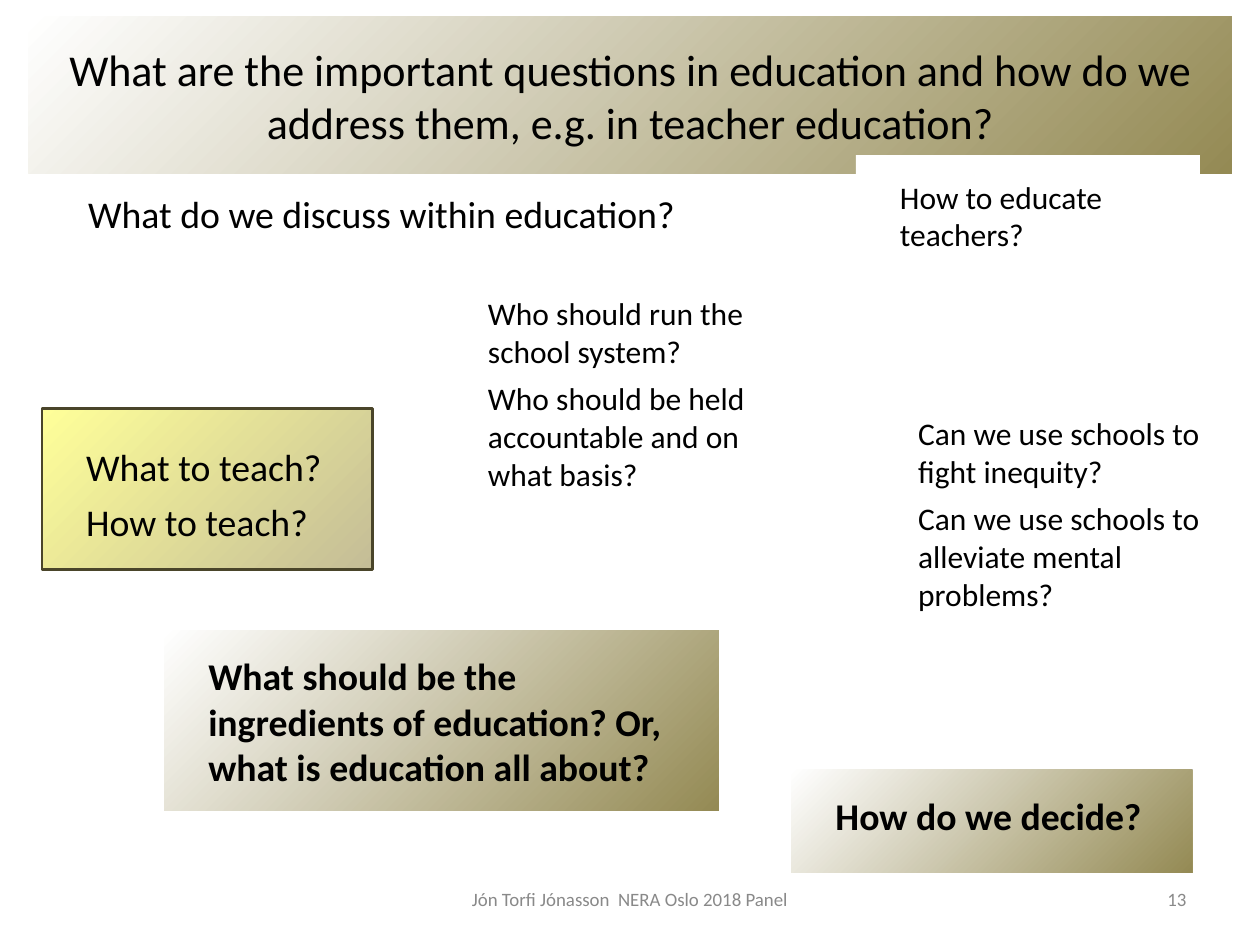
from dataclasses import dataclass

from pptx import Presentation
from pptx.dml.color import RGBColor
from pptx.enum.shapes import MSO_SHAPE
from pptx.enum.text import MSO_ANCHOR, MSO_AUTO_SIZE, PP_ALIGN
from pptx.shapes.autoshape import Shape
from pptx.slide import Slide
from pptx.util import Inches, Pt

COLORS = {
    "white": "FFFFFF",
    "olive": "948A54",
    "yellow": "FFFF99",
    "sand": "C4BD97",
    "brown": "4A452A",
    "black": "000000",
    "gray": "898989",
}
THIN = (0.1, 0.05, 0.1, 0.05)
WIDE = (0.39, 0.2, 0.39, 0.2)
OLIVE = ("white", "olive")


@dataclass(frozen=True)
class Box:
    area: tuple[float, float, float, float]
    lines: tuple[str, ...]
    size: int = 20
    pad: tuple[float, float, float, float] = WIDE
    fill: tuple[str, ...] = ()
    edge: str = ""
    bold: bool = False
    color: str = "black"
    align: PP_ALIGN = PP_ALIGN.LEFT
    anchor: MSO_ANCHOR = MSO_ANCHOR.TOP


TITLE = Box(
    (0.25, 0.15, 10.63, 1.38),
    ("What are the important questions in education and how do we "
     "address them, e.g. in teacher education?",),
    28, THIN, OLIVE, align=PP_ALIGN.CENTER, anchor=MSO_ANCHOR.MIDDLE,
)
BOXES = (
    Box((3.8, 7.72, 3.53, 0.44), ("Jón Torfi Jónasson  NERA Oslo 2018 Panel",),
        12, THIN, color="gray", align=PP_ALIGN.CENTER, anchor=MSO_ANCHOR.MIDDLE),
    Box((7.98, 7.72, 2.6, 0.44), ("13",),
        12, THIN, color="gray", align=PP_ALIGN.RIGHT, anchor=MSO_ANCHOR.MIDDLE),
    Box((0.68, 1.64, 5.67, 0.63), ("What do we discuss within education?",), 24, THIN),
    Box((0.37, 3.61, 2.92, 1.42), ("What to teach?", "How to teach?"),
        24, (0.39, 0.31, 0.39, 0.2), ("yellow", "sand"), "brown"),
    Box((3.92, 2.4, 3.49, 2.54),
        ("Who should run the school system?",
         "Who should be held accountable and on what basis?")),
    Box((7.56, 1.37, 3.04, 1.24), ("How to educate teachers?",), fill=("white",)),
    Box((1.45, 5.57, 4.9, 1.59),
        ("What should be the ingredients of education? Or, "
         "what is education all about?",),
        24, fill=OLIVE, bold=True),
    Box((6.99, 6.8, 3.54, 0.91), ("How do we decide?",), 24, fill=OLIVE, bold=True),
    Box((7.72, 3.46, 3.41, 2.33),
        ("Can we use schools to fight inequity?",
         "Can we use schools to alleviate mental problems?")),
)


def tint(name: str) -> RGBColor:
    return RGBColor.from_string(COLORS[name])


def apply(target: object, values: dict[str, object]) -> None:
    for key, value in values.items():
        setattr(target, key, value)


def paint(shape: Shape, box: Box) -> None:
    if len(box.fill) == 1:
        shape.fill.solid()
        shape.fill.fore_color.rgb = tint(box.fill[0])
    elif box.fill:
        shape.fill.gradient()
        shape.fill.gradient_angle = 315
        for stop, name in zip(shape.fill.gradient_stops, box.fill):
            stop.color.rgb = tint(name)
    if box.edge:
        shape.line.color.rgb = tint(box.edge)
        shape.line.width = Pt(1.75)
    else:
        shape.line.fill.background()


def write(shape: Shape, box: Box) -> None:
    frame = shape.text_frame
    sides = ("margin_left", "margin_top", "margin_right", "margin_bottom")
    apply(frame, {
        "text": "\n".join(box.lines),
        "word_wrap": True,
        "auto_size": MSO_AUTO_SIZE.NONE,
        "vertical_anchor": box.anchor,
        **{side: Inches(gap) for side, gap in zip(sides, box.pad)},
    })
    for rank, para in enumerate(frame.paragraphs):
        apply(para, {"alignment": box.align, "space_before": Pt(6 if rank else 0)})
        apply(para.font, {"name": "Calibri", "size": Pt(box.size), "bold": box.bold})
        para.font.color.rgb = tint(box.color)


def draw(slide: Slide, box: Box) -> None:
    area = [Inches(length) for length in box.area]
    if box.fill:
        shape = slide.shapes.add_shape(MSO_SHAPE.RECTANGLE, *area)
        shape.shadow.inherit = False
    else:
        shape = slide.shapes.add_textbox(*area)
    paint(shape, box)
    write(shape, box)


def main() -> None:
    deck = Presentation()
    apply(deck, {"slide_width": Inches(11.13), "slide_height": Inches(8.33)})
    slide = deck.slides.add_slide(deck.slide_layouts[5])
    title = slide.shapes.title
    sides = ("left", "top", "width", "height")
    apply(title, {side: Inches(size) for side, size in zip(sides, TITLE.area)})
    paint(title, TITLE)
    write(title, TITLE)
    for box in BOXES:
        draw(slide, box)
    deck.save("out.pptx")


if __name__ == "__main__":
    main()
